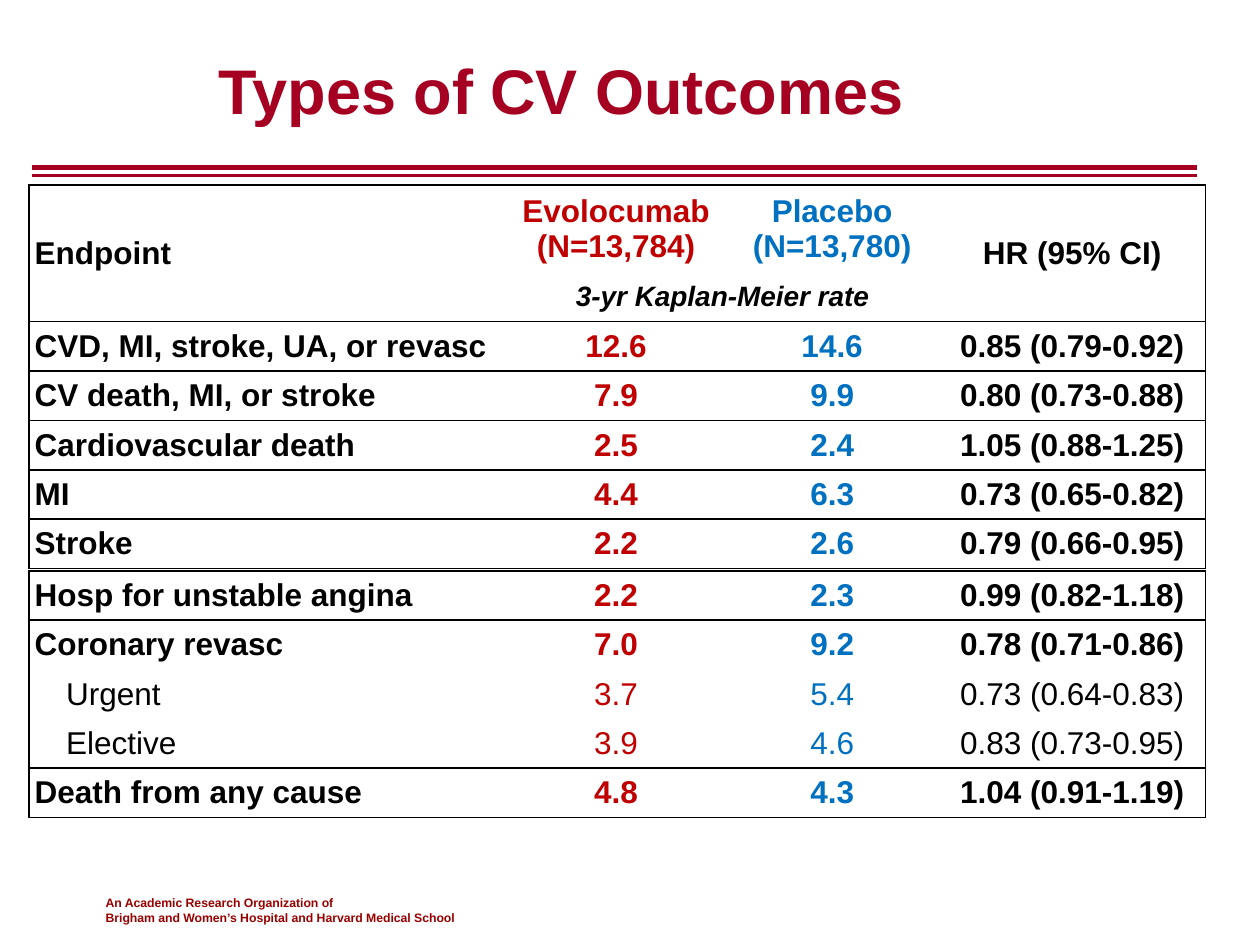
from dataclasses import dataclass
from typing import NamedTuple

from lxml.etree import SubElement
from pptx import Presentation
from pptx.dml.color import RGBColor
from pptx.enum.shapes import MSO_CONNECTOR as Connector
from pptx.enum.text import MSO_ANCHOR as Anchor, PP_ALIGN as Align
from pptx.oxml import parse_xml
from pptx.oxml.ns import nsdecls, qn
from pptx.util import Emu, Inches, Pt

FONT = "Arial"
CRIMSON, MAROON = "A50021", "990000"
BLACK, WHITE, RED, BLUE = "000000", "FFFFFF", "C00000", "0070C0"
WIDTH, HEIGHT = Inches(10), Inches(7.5)

# Table grid, in percent of the slide's width and height
TABLE_LEFT = 2.3
COLUMNS = (37.9, 17.4, 16.9, 21.2)
COLUMN_COLORS = (BLACK, RED, BLUE, BLACK)
HEADER_ROWS = (8.9, 4.95)
BODY_ROW = 5.07
CELL_MARGIN = Pt(3.3)


@dataclass
class Box:
    """A rectangle in percent of the slide."""
    left: float
    top: float
    width: float
    height: float

    def place(self) -> tuple:
        return across(self.left), down(self.top), across(self.width), down(self.height)


@dataclass
class Style:
    size: float
    color: str
    bold: bool = True
    italic: bool = False
    align: Align = Align.LEFT


class Outcome(NamedTuple):
    label: str
    evolocumab: str
    placebo: str
    ratio: str
    is_detail: bool = False
    rule_below: bool = True


MAIN_OUTCOMES = (
    Outcome("CVD, MI, stroke, UA, or revasc", "12.6", "14.6", "0.85 (0.79-0.92)"),
    Outcome("CV death, MI, or stroke", "7.9", "9.9", "0.80 (0.73-0.88)"),
    Outcome("Cardiovascular death", "2.5", "2.4", "1.05 (0.88-1.25)"),
    Outcome("MI", "4.4", "6.3", "0.73 (0.65-0.82)"),
    Outcome("Stroke", "2.2", "2.6", "0.79 (0.66-0.95)"),
)
OTHER_OUTCOMES = (
    Outcome("Hosp for unstable angina", "2.2", "2.3", "0.99 (0.82-1.18)"),
    Outcome("Coronary revasc", "7.0", "9.2", "0.78 (0.71-0.86)", rule_below=False),
    Outcome("Urgent", "3.7", "5.4", "0.73 (0.64-0.83)", True, False),
    Outcome("Elective", "3.9", "4.6", "0.83 (0.73-0.95)", True),
    Outcome("Death from any cause", "4.8", "4.3", "1.04 (0.91-1.19)"),
)


def across(percent: float) -> Emu:
    return Emu(round(WIDTH * percent / 100))


def down(percent: float) -> Emu:
    return Emu(round(HEIGHT * percent / 100))


def color_of(value: str) -> RGBColor:
    return RGBColor.from_string(value)


def write(paragraph, text: str, style: Style) -> None:
    paragraph.text = text
    paragraph.alignment = style.align
    font = paragraph.font
    font.name, font.size = FONT, Pt(style.size)
    font.bold, font.italic = style.bold, style.italic
    font.color.rgb = color_of(style.color)


def add_text(slide, box: Box, lines: tuple, style: Style, anchor: Anchor) -> None:
    frame = slide.shapes.add_textbox(*box.place()).text_frame
    frame.word_wrap = True
    frame.vertical_anchor = anchor
    for index, line in enumerate(lines):
        paragraph = frame.add_paragraph() if index else frame.paragraphs[0]
        write(paragraph, line, style)


def add_rule(slide, top: float, weight: float) -> None:
    line = slide.shapes.add_connector(
        Connector.STRAIGHT, across(2.5), down(top), across(95), down(top))
    line.line.color.rgb = color_of(CRIMSON)
    line.line.width = Pt(weight)
    SubElement(line._element.spPr, qn("a:effectLst"))


def set_borders(cell, sides: str) -> None:
    """Draw the sides named by the letters L, R, T and B; clear the others."""
    properties = cell._tc.get_or_add_tcPr()
    for index, side in enumerate("LRTB"):
        fill = (f'<a:solidFill><a:srgbClr val="{BLACK}"/></a:solidFill>'
                if side in sides else "<a:noFill/>")
        properties.insert(index, parse_xml(
            f'<a:ln{side} {nsdecls("a")} w="{Pt(1)}">{fill}</a:ln{side}>'))


def fill_cell(cell, text: str, style: Style) -> None:
    cell.vertical_anchor = Anchor.MIDDLE
    cell.margin_left = cell.margin_right = CELL_MARGIN
    cell.margin_top = cell.margin_bottom = CELL_MARGIN
    write(cell.text_frame.paragraphs[0], text, style)


def add_grid(slide, top: float, heights: tuple, rules: tuple):
    """Add an empty table; rules tells which rows have a line below them."""
    box = Box(TABLE_LEFT, top, sum(COLUMNS), sum(heights))
    table = slide.shapes.add_table(len(heights), len(COLUMNS), *box.place()).table
    table.first_row = table.horz_banding = False
    for column, width in zip(table.columns, COLUMNS):
        column.width = across(width)
    for index, height in enumerate(heights):
        table.rows[index].height = down(height)
        sides = "T" * (index == 0 or rules[index - 1]) + "B" * rules[index]
        for position, cell in enumerate(table.rows[index].cells):
            cell.fill.solid()
            cell.fill.fore_color.rgb = color_of(WHITE)
            edge = {0: "L", len(COLUMNS) - 1: "R"}.get(position, "")
            # The outer header cells span both header rows
            spans = "TB" if edge and index == 0 else sides
            set_borders(cell, spans + edge)
    return table


def fill_header(table) -> None:
    table.cell(0, 0).merge(table.cell(1, 0))
    table.cell(0, 3).merge(table.cell(1, 3))
    table.cell(1, 1).merge(table.cell(1, 2))
    titles = ("Endpoint", "Evolocumab\n(N=13,784)", "Placebo\n(N=13,780)", "HR (95% CI)")
    for column, title in enumerate(titles):
        align = Align.CENTER if column else Align.LEFT
        fill_cell(table.cell(0, column), title,
                  Style(18, COLUMN_COLORS[column], align=align))
    fill_cell(table.cell(1, 1), "3-yr Kaplan-Meier rate",
              Style(16, BLACK, italic=True, align=Align.CENTER))


def fill_outcomes(table, outcomes: tuple, first_row: int) -> None:
    for row, outcome in enumerate(outcomes, first_row):
        for column, text in enumerate(outcome[:len(COLUMNS)]):
            cell = table.cell(row, column)
            align = Align.CENTER if column else Align.LEFT
            fill_cell(cell, text, Style(18, COLUMN_COLORS[column],
                                        bold=not outcome.is_detail, align=align))
            if outcome.is_detail and column == 0:
                properties = cell.text_frame.paragraphs[0]._p.get_or_add_pPr()
                properties.set("marL", str(across(2.5)))


def add_outcome_table(slide, top: float, outcomes: tuple, header: tuple = ()) -> None:
    heights = header + (BODY_ROW,) * len(outcomes)
    header_rules = (False, True) if header else ()
    rules = header_rules + tuple(outcome.rule_below for outcome in outcomes)
    table = add_grid(slide, top, heights, rules)
    if header:
        fill_header(table)
    fill_outcomes(table, outcomes, len(header))


def main() -> None:
    presentation = Presentation()
    presentation.slide_width, presentation.slide_height = WIDTH, HEIGHT
    slide = presentation.slides.add_slide(presentation.slide_layouts[6])

    # Footer, double rule and title
    add_text(slide, Box(7.4, 94.13, 43.3, 4.4),
             ("An Academic Research Organization of",
              "Brigham and Women’s Hospital and Harvard Medical School"),
             Style(7, MAROON), Anchor.TOP)
    add_rule(slide, 17.75, 3)
    add_rule(slide, 18.55, 1.5)
    add_text(slide, Box(8.3, 1.07, 72.5, 16.67), ("Types of CV Outcomes",),
             Style(36, CRIMSON, align=Align.CENTER), Anchor.MIDDLE)

    # Outcome tables
    add_outcome_table(slide, 19.6, MAIN_OUTCOMES, HEADER_ROWS)
    add_outcome_table(slide, 60.4, OTHER_OUTCOMES)
    presentation.save("out.pptx")


if __name__ == "__main__":
    main()
